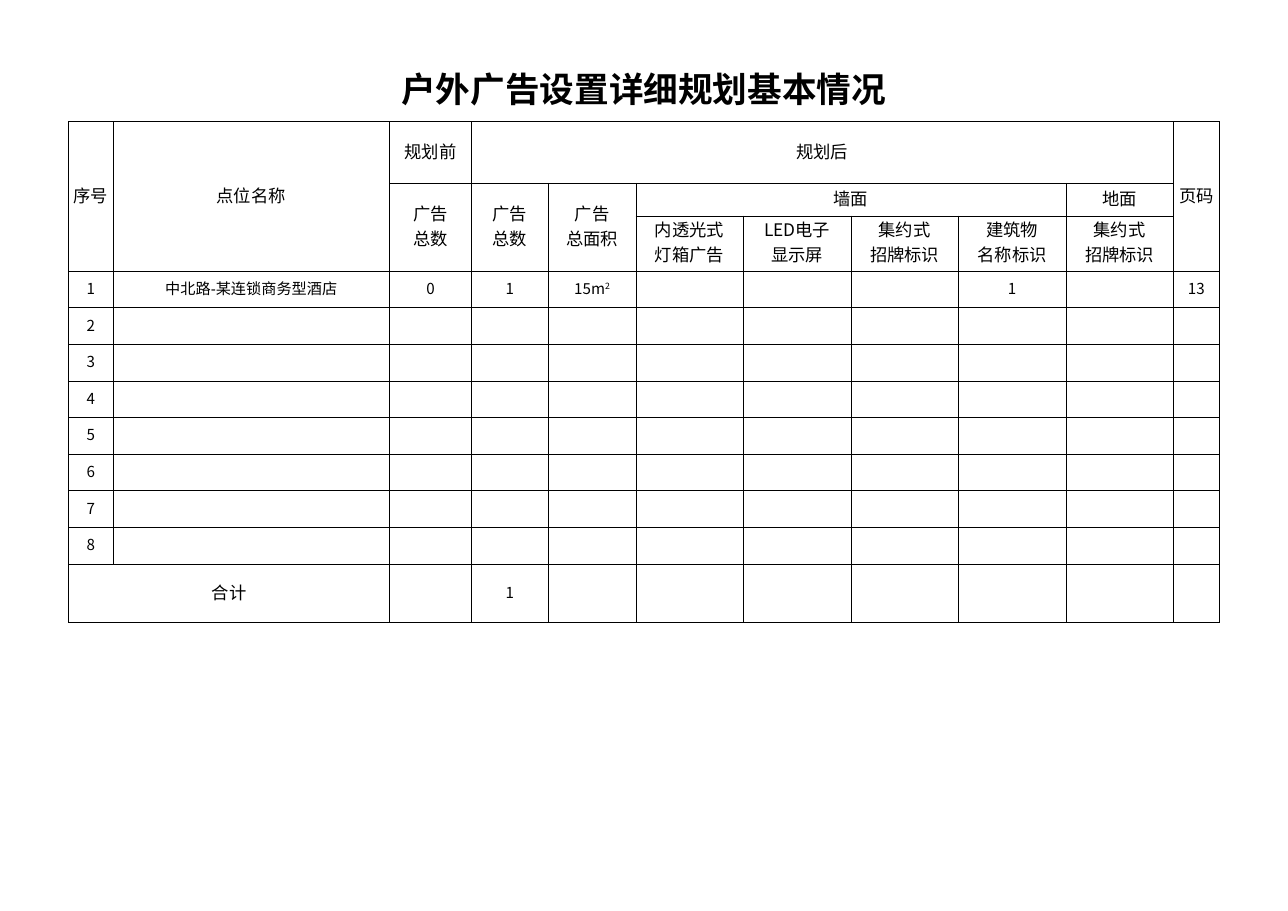
import dataclasses

import lxml.etree
import pptx
import pptx.dml.color
import pptx.enum.text
import pptx.oxml.ns
import pptx.util


@dataclasses.dataclass(frozen=True)
class Theme:
    ink: str = "000000"
    cjk_font: str = "Noto Sans CJK SC"
    latin_font: str = "Arial"
    title_size: int = 32
    header_size: int = 16
    body_size: int = 14
    border_width: float = 0.5


THEME = Theme()
SLIDE_WIDTH, SLIDE_HEIGHT = 16.53, 11.69
TABLE_LEFT, TABLE_TOP = 0.88, 0.73
COLUMN_WIDTHS = [0.57, 3.55, 1.05, 0.99, 1.12] + [1.38] * 5 + [0.59]
SITE_COUNT = 8
ROW_HEIGHTS = [0.83, 0.79, 0.42, 0.71] + [0.47] * SITE_COUNT + [0.75]
FIRST_SITE_ROW = 4
TOTAL_ROW = FIRST_SITE_ROW + SITE_COUNT

TITLE = "户外广告设置详细规划基本情况"
# row, column, rows spanned, columns spanned, text
HEADERS = [
    (1, 0, 3, 1, "序号"),
    (1, 1, 3, 1, "点位名称"),
    (1, 2, 1, 1, "规划前"),
    (1, 3, 1, 7, "规划后"),
    (1, 10, 3, 1, "页码"),
    (2, 2, 2, 1, "广告\n总数"),
    (2, 3, 2, 1, "广告\n总数"),
    (2, 4, 2, 1, "广告\n总面积"),
    (2, 5, 1, 4, "墙面"),
    (2, 9, 1, 1, "地面"),
    (3, 5, 1, 1, "内透光式\n灯箱广告"),
    (3, 6, 1, 1, "LED电子\n显示屏"),
    (3, 7, 1, 1, "集约式\n招牌标识"),
    (3, 8, 1, 1, "建筑物\n名称标识"),
    (3, 9, 1, 1, "集约式\n招牌标识"),
    (TOTAL_ROW, 0, 1, 2, "合计"),
]
SITE_NAME = "中北路-某连锁商务型酒店"
FIRST_SITE_VALUES = {2: "0", 3: "1", 4: "15m", 8: "1", 10: "13"}


def add_run(paragraph, text, size, font_name=THEME.cjk_font, bold=False):
    run = paragraph.add_run()
    run.text = text
    run.font.size = pptx.util.Pt(size)
    run.font.bold = bold
    run.font.name = font_name
    run.font.color.rgb = pptx.dml.color.RGBColor.from_string(THEME.ink)
    east_asian = lxml.etree.SubElement(
        run._r.get_or_add_rPr(), pptx.oxml.ns.qn("a:ea"))
    east_asian.set("typeface", THEME.cjk_font)
    return run


def write_cell(cell, text, size, **run_format):
    """Write one centred paragraph for each line of text."""
    frame = cell.text_frame
    for index, line in enumerate(text.split("\n")):
        paragraph = frame.add_paragraph() if index else frame.paragraphs[0]
        paragraph.alignment = pptx.enum.text.PP_ALIGN.CENTER
        add_run(paragraph, line, size, **run_format)


def set_borders(cell, visible_sides):
    properties = cell._tc.get_or_add_tcPr()
    for index, side in enumerate("LRTB"):
        line = lxml.etree.Element(pptx.oxml.ns.qn(f"a:ln{side}"))
        line.set("w", str(pptx.util.Pt(THEME.border_width)))
        if side in visible_sides:
            fill = lxml.etree.SubElement(line, pptx.oxml.ns.qn("a:solidFill"))
            color = lxml.etree.SubElement(fill, pptx.oxml.ns.qn("a:srgbClr"))
            color.set("val", THEME.ink)
        else:
            lxml.etree.SubElement(line, pptx.oxml.ns.qn("a:noFill"))
        properties.insert(index, line)


def format_cell(cell, visible_sides):
    cell.fill.background()
    cell.vertical_anchor = pptx.enum.text.MSO_ANCHOR.MIDDLE
    cell.margin_left = cell.margin_right = pptx.util.Inches(0.01)
    cell.margin_top = pptx.util.Inches(0.01)
    cell.margin_bottom = pptx.util.Inches(0.05)
    set_borders(cell, visible_sides)


def add_grid(slide):
    """Add the empty bordered table; its title row has only a bottom line."""
    frame = slide.shapes.add_table(
        len(ROW_HEIGHTS), len(COLUMN_WIDTHS),
        pptx.util.Inches(TABLE_LEFT), pptx.util.Inches(TABLE_TOP),
        pptx.util.Inches(sum(COLUMN_WIDTHS)),
        pptx.util.Inches(sum(ROW_HEIGHTS)))
    table = frame.table
    table.first_row = table.horz_banding = False
    for column, width in zip(table.columns, COLUMN_WIDTHS):
        column.width = pptx.util.Inches(width)
    for index, (row, height) in enumerate(zip(table.rows, ROW_HEIGHTS)):
        row.height = pptx.util.Inches(height)
        for cell in row.cells:
            format_cell(cell, "LRTB" if index else "B")
    return table


def fill_headers(table):
    title = table.cell(0, 0)
    title.merge(table.cell(0, len(COLUMN_WIDTHS) - 1))
    write_cell(title, TITLE, THEME.title_size, bold=True)
    for row, column, row_span, column_span, text in HEADERS:
        cell = table.cell(row, column)
        if row_span * column_span > 1:
            cell.merge(table.cell(row + row_span - 1,
                                  column + column_span - 1))
        write_cell(cell, text, THEME.header_size)


def fill_sites(table):
    for number in range(1, SITE_COUNT + 1):
        write_cell(table.cell(FIRST_SITE_ROW + number - 1, 0),
                   str(number), THEME.body_size)
    write_cell(table.cell(FIRST_SITE_ROW, 1), SITE_NAME, THEME.body_size,
               font_name=THEME.latin_font)
    for column, value in FIRST_SITE_VALUES.items():
        write_cell(table.cell(FIRST_SITE_ROW, column), value, THEME.body_size)
    area = table.cell(FIRST_SITE_ROW, 4).text_frame.paragraphs[0]
    square = add_run(area, "2", THEME.body_size)
    square._r.get_or_add_rPr().set("baseline", "30000")
    write_cell(table.cell(TOTAL_ROW, 3), "1", THEME.body_size)


def main():
    presentation = pptx.Presentation()
    presentation.slide_width = pptx.util.Inches(SLIDE_WIDTH)
    presentation.slide_height = pptx.util.Inches(SLIDE_HEIGHT)
    slide = presentation.slides.add_slide(presentation.slide_layouts[6])
    table = add_grid(slide)
    fill_headers(table)
    fill_sites(table)
    presentation.save("out.pptx")


if __name__ == "__main__":
    main()
